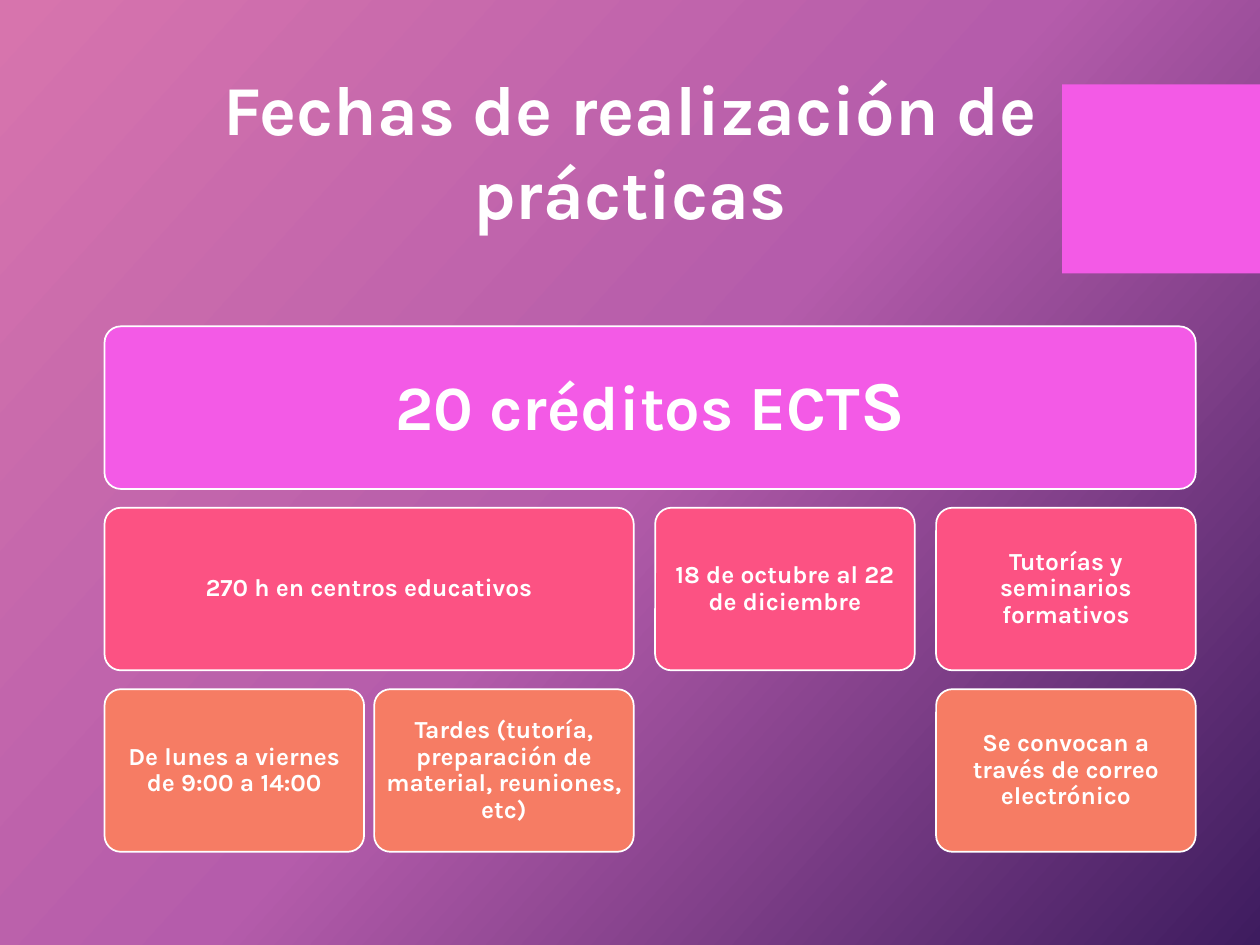
from copy import deepcopy

from pptx import Presentation
from pptx.dml.color import RGBColor
from pptx.enum.shapes import MSO_SHAPE
from pptx.enum.text import MSO_ANCHOR, PP_ALIGN
from pptx.oxml.ns import qn
from pptx.util import Inches, Pt

RECT = MSO_SHAPE.RECTANGLE
ROUNDED = MSO_SHAPE.ROUNDED_RECTANGLE
CENTER = PP_ALIGN.CENTER
TOP, MIDDLE = MSO_ANCHOR.TOP, MSO_ANCHOR.MIDDLE

FONT = "Karla"
WHITE, PINK, ROSE, ORANGE = "FFFFFF", "F35AE6", "FC5283", "F67C64"
BACKGROUND = [(0, "D774AD"), (0.5, "B55CAB"), (1, "3E1C5F")]

BOX_W, BOX_H = 2.06, 1.29
SIBLING_GAP, GROUP_GAP, ROW_GAP = 0.08, 0.17, 0.15
GRID_TOP = 2.59
COLUMNS = [0.83]
for gap in (SIBLING_GAP, GROUP_GAP, GROUP_GAP):
    COLUMNS.append(COLUMNS[-1] + BOX_W + gap)

# row, first column, last column, colour, text runs with sizes
BOXES = [
    (0, 0, 3, PINK, [("20 créditos ECT", 36), ("S", 40)]),
    (1, 0, 1, ROSE, [("270 h en centros educativos", 14)]),
    (1, 2, 2, ROSE, [("18 de octubre al 22 de diciembre", 14)]),
    (1, 3, 3, ROSE, [("Tutorías y seminarios formativos", 14)]),
    (2, 0, 0, ORANGE, [("De lunes a viernes de 9:00 a 14:00", 14)]),
    (2, 1, 1, ORANGE,
     [("Tardes (tutoría, preparación de material, reuniones, etc)", 14)]),
    (2, 3, 3, ORANGE, [("Se convocan a través de correo electrónico", 14)]),
]


def color(value):
    return RGBColor.from_string(value)


def set_background(s):
    fill = s.background.fill
    fill.gradient()
    fill.gradient_angle = 360 - 42
    stops = next(s._element.iter(qn("a:gsLst")))
    stops.append(deepcopy(stops[-1]))
    for stop, (position, value) in zip(fill.gradient_stops, BACKGROUND):
        stop.position = position
        stop.color.rgb = color(value)


def write_runs(p, runs):
    p.alignment = CENTER
    for text, size in runs:
        r = p.add_run()
        r.text = text
        r.font.name = FONT
        r.font.size = Pt(size)
        r.font.bold = True
        r.font.color.rgb = color(WHITE)


def add_block(s, kind, left, top, width, height, fill):
    sp = s.shapes.add_shape(
        kind, Inches(left), Inches(top), Inches(width), Inches(height))
    sp.shadow.inherit = False
    sp.fill.solid()
    sp.fill.fore_color.rgb = color(fill)
    sp.line.fill.background()
    return sp


def add_box(s, row, first, last, fill, runs):
    """Add a rounded box that spans the grid columns first to last."""
    left = COLUMNS[first]
    sp = add_block(s, ROUNDED, left, GRID_TOP + row * (BOX_H + ROW_GAP),
                   COLUMNS[last] + BOX_W - left, BOX_H, fill)
    sp.adjustments[0] = 0.1
    sp.line.color.rgb = color(WHITE)
    sp.line.width = Pt(1)
    tf = sp.text_frame
    tf.word_wrap = True
    tf.vertical_anchor = MIDDLE
    tf.margin_left = tf.margin_right = Inches(0.05)
    tf.margin_top = tf.margin_bottom = Inches(0.05)
    p = tf.paragraphs[0]
    p.line_spacing = 0.9
    write_runs(p, runs)


def set_title(s, text):
    title = s.shapes.title
    title.left, title.top = Inches(0.5), Inches(0.47)
    title.width, title.height = Inches(9), Inches(0.72)
    tf = title.text_frame
    tf.word_wrap = True
    tf.vertical_anchor = TOP
    write_runs(tf.paragraphs[0], [(text, 40)])


def main():
    prs = Presentation()
    prs.slide_width, prs.slide_height = Inches(10), Inches(7.5)
    s = prs.slides.add_slide(prs.slide_layouts[5])
    set_background(s)
    set_title(s, "Fechas de realización de prácticas")
    add_block(s, RECT, 8.43, 0.67, 1.57, 1.5, PINK)
    for box in BOXES:
        add_box(s, *box)
    prs.save("out.pptx")


if __name__ == "__main__":
    main()
